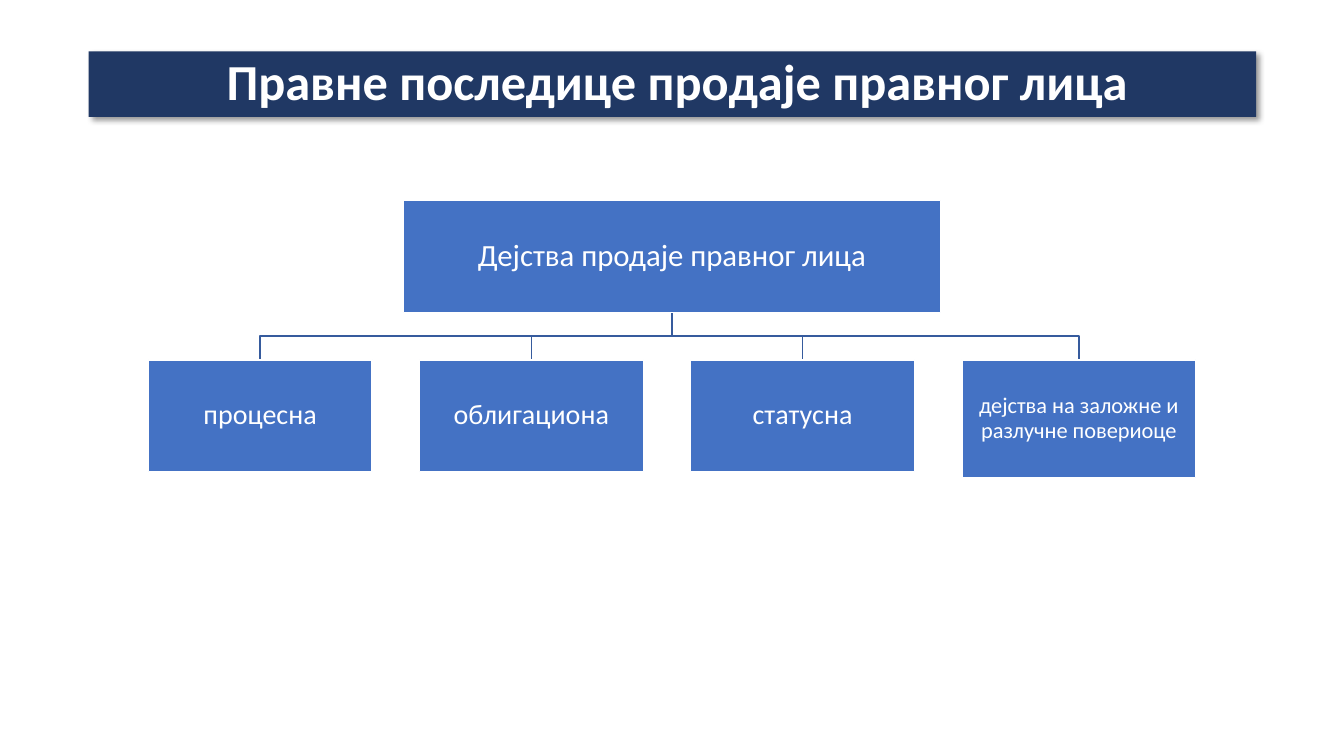
from dataclasses import dataclass

from pptx import Presentation
from pptx.dml.color import RGBColor
from pptx.enum.shapes import MSO_SHAPE
from pptx.enum.text import MSO_ANCHOR, MSO_AUTO_SIZE, PP_ALIGN
from pptx.oxml import parse_xml
from pptx.util import Inches, Pt

RECTANGLE = MSO_SHAPE.RECTANGLE
MIDDLE = MSO_ANCHOR.MIDDLE
BOTTOM = MSO_ANCHOR.BOTTOM
CENTER = PP_ALIGN.CENTER
NO_AUTOFIT = MSO_AUTO_SIZE.NONE
TITLE_ONLY = 5

TITLE_SHADOW = (
    '<a:effectLst xmlns:a="http://schemas.openxmlformats.org/drawingml/2006/main">'
    '<a:outerShdw blurRad="50800" dist="38100" dir="2700000" algn="tl" rotWithShape="0">'
    '<a:prstClr val="black"><a:alpha val="40000"/></a:prstClr>'
    '</a:outerShdw></a:effectLst>'
)


@dataclass(frozen=True)
class Theme:
    font: str = "Calibri"
    banner: RGBColor = RGBColor(0x20, 0x38, 0x64)
    box: RGBColor = RGBColor(0x44, 0x72, 0xC4)
    branch: RGBColor = RGBColor(0x36, 0x5B, 0x9D)
    light: RGBColor = RGBColor(0xFF, 0xFF, 0xFF)
    title_size: int = 36
    root_size: int = 22
    child_size: int = 20
    long_child_size: int = 16
    line_width: int = 1


class HierarchySlide:
    def __init__(self, presentation, theme):
        self.theme = theme
        self.slide = presentation.slides.add_slide(presentation.slide_layouts[TITLE_ONLY])

    def apply(self, target, formats):
        for name, value in formats.items():
            setattr(target, name, value)

    def label(self, shape, text, size, bold, frame_formats):
        frame = shape.text_frame
        self.apply(frame, {"word_wrap": True, "auto_size": NO_AUTOFIT, **frame_formats})
        paragraph = frame.paragraphs[0]
        paragraph.text = text
        self.apply(paragraph, {"alignment": CENTER, "line_spacing": 0.9, "space_before": Pt(0)})
        self.apply(paragraph.font, {"name": self.theme.font, "size": Pt(size), "bold": bold})
        paragraph.font.color.rgb = self.theme.light

    def fill(self, shape, color):
        shape.fill.solid()
        shape.fill.fore_color.rgb = color

    def outline(self, shape, color):
        shape.line.color.rgb = color
        shape.line.width = Pt(self.theme.line_width)

    def title(self, text, left, top, width, height):
        shape = self.slide.shapes.title
        self.apply(shape, {
            "left": Inches(left), "top": Inches(top),
            "width": Inches(width), "height": Inches(height),
        })
        self.fill(shape, self.theme.banner)
        shape._element.spPr.append(parse_xml(TITLE_SHADOW))
        self.label(shape, text, self.theme.title_size, True, {
            "vertical_anchor": BOTTOM,
            "margin_left": Inches(0.2), "margin_right": Inches(0.1),
            "margin_top": Inches(0.05), "margin_bottom": Inches(0.05),
        })

    def box(self, text, size, left, top, width, height):
        shape = self.slide.shapes.add_shape(
            RECTANGLE, Inches(left), Inches(top), Inches(width), Inches(height))
        shape.shadow.inherit = False
        self.fill(shape, self.theme.box)
        self.outline(shape, self.theme.light)
        margins = dict.fromkeys(
            ("margin_left", "margin_right", "margin_top", "margin_bottom"), Inches(0.01))
        self.label(shape, text, size, False, {"vertical_anchor": MIDDLE, **margins})

    def branch(self, start_x, start_y, end_x, end_y):
        middle_y = (start_y + end_y) / 2
        builder = self.slide.shapes.build_freeform(Inches(start_x), Inches(start_y))
        corners = [(start_x, middle_y), (end_x, middle_y), (end_x, end_y)]
        builder.add_line_segments([(Inches(x), Inches(y)) for x, y in corners], close=False)
        shape = builder.convert_to_shape()
        shape.shadow.inherit = False
        shape.fill.background()
        self.outline(shape, self.theme.branch)


def main():
    presentation = Presentation()
    presentation.slide_width = Inches(13.33)
    presentation.slide_height = Inches(7.5)
    theme = Theme()
    slide = HierarchySlide(presentation, theme)
    slide.title("Правне последице продаје правног лица", 0.88, 0.51, 11.58, 0.65)

    root_left, root_top, root_width, root_height = 4, 1.99, 5.33, 1.11
    root_center = root_left + root_width / 2
    root_bottom = root_top + root_height
    child_left, child_top, child_step = 1.47, 3.57, 2.69
    children = [
        ("процесна", theme.child_size, 2.22, 1.11),
        ("облигациона", theme.child_size, 2.22, 1.11),
        ("статусна", theme.child_size, 2.22, 1.11),
        ("дејства на заложне и разлучне повериоце", theme.long_child_size, 2.32, 1.17),
    ]
    lefts = [child_left + index * child_step for index in range(len(children))]

    for left, (_, _, width, _) in zip(lefts, children):
        slide.branch(root_center, root_bottom, left + width / 2, child_top)
    slide.box("Дејства продаје правног лица", theme.root_size,
              root_left, root_top, root_width, root_height)
    for left, (text, size, width, height) in zip(lefts, children):
        slide.box(text, size, left, child_top, width, height)

    presentation.save("out.pptx")


if __name__ == "__main__":
    main()
